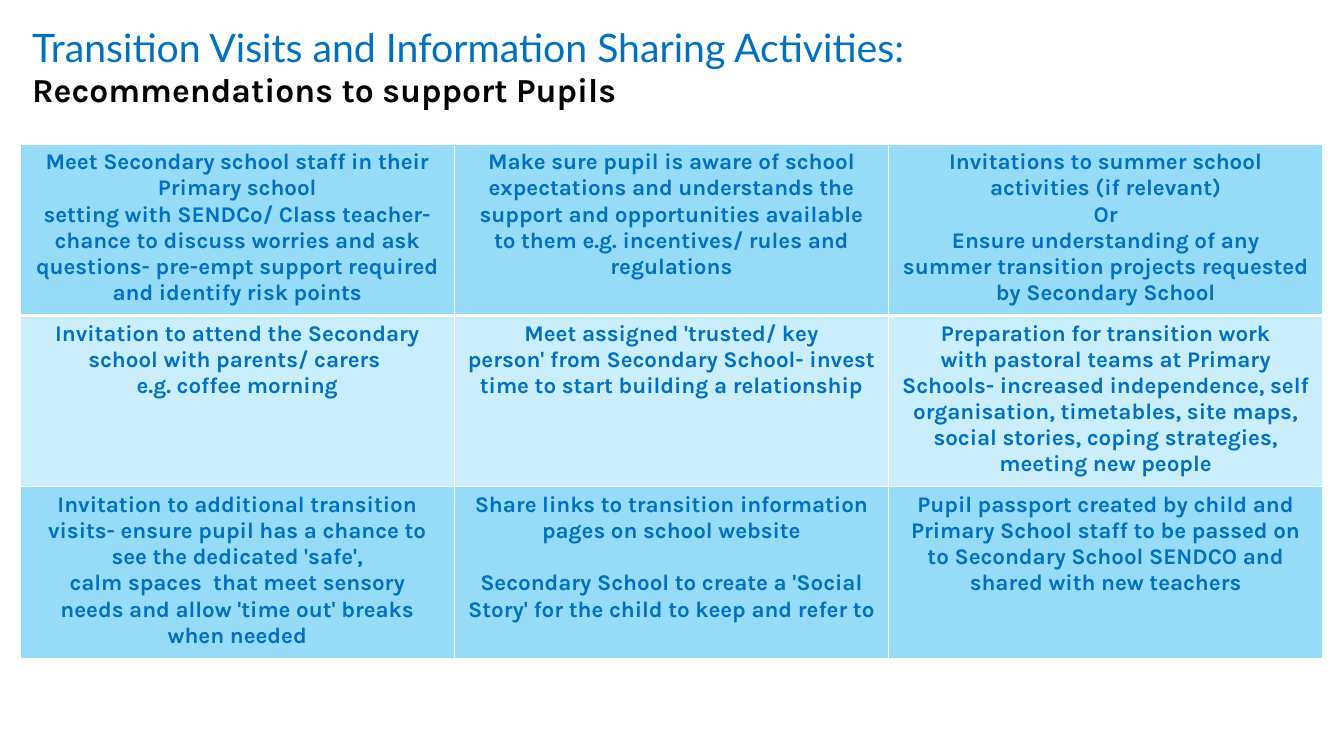
from lxml.etree import SubElement
from pptx import Presentation
from pptx.dml.color import RGBColor
from pptx.enum.text import PP_ALIGN as Align
from pptx.oxml.ns import qn
from pptx.util import Inches, Pt

BLUE, BLACK, WHITE = "0070C0", "000000", "FFFFFF"
ROW_FILLS = ["96DCF8", "CAEEFB"]
ROW_HEIGHT = 1.7
HARD_SPACE = chr(160)

# Each cell is a list of paragraphs; "~" stands for a non-breaking space
RECOMMENDATIONS = [
    [
        ["Meet Secondary school staff in~their Primary school "
         "setting~with~SENDCo/~Class teacher- chance to discuss~worries and~ask "
         "questions- pre-empt support required and identify risk points"],
        ["Make sure~pupil is aware~of school expectations and understands~the "
         "support~and opportunities~available to~them e.g.~incentives/~rules and "
         "regulations"],
        ["Invitations to~summer~school activities (if relevant)",
         "Or",
         "Ensure understanding of any summer~transition projects requested "
         "by Secondary~School"],
    ],
    [
        ["Invitation to attend the Secondary school with parents/ carers~",
         "e.g. coffee~morning"],
        ["Meet~assigned 'trusted/~key person'~from Secondary School-~invest "
         "time~to start~building a relationship"],
        ["Preparation for transition work with~pastoral teams at~Primary "
         "Schools-~increased independence, self organisation, timetables,~site maps, "
         "social stories,~coping strategies, meeting~new people"],
    ],
    [
        ["Invitation to additional transition visits-~ensure pupil has a chance to "
         "see the dedicated 'safe', calm~spaces~~that meet sensory "
         "needs~and allow~'time out' breaks when needed"],
        ["Share links to~transition information pages on~school website",
         "Secondary School to create a 'Social Story' for the child to keep and "
         "refer to"],
        ["Pupil passport created~by child and Primary School staff to~be~passed on "
         "to~Secondary~School SENDCO~and shared with new teachers"],
    ],
]
# Points of space between the paragraphs of a cell, by row and column
PARAGRAPH_GAPS = {(2, 1): 18.7}


def color(hex_code):
    return RGBColor.from_string(hex_code)


def style(paragraph, font_name, size, hex_code, bold=False):
    font = paragraph.font
    font.name, font.size, font.bold = font_name, Pt(size), bold
    font.color.rgb = color(hex_code)


def add_heading(slide, left, top, width, height, text, *font):
    frame = slide.shapes.add_textbox(
        Inches(left), Inches(top), Inches(width), Inches(height)).text_frame
    frame.word_wrap = True
    frame.text = text
    style(frame.paragraphs[0], *font)


def set_borders(cell, top, bottom):
    properties = cell._tc.get_or_add_tcPr()
    widths = {"a:lnL": 1, "a:lnR": 1, "a:lnT": top, "a:lnB": bottom}
    for position, (tag, width) in enumerate(widths.items()):
        line = SubElement(properties, qn(tag), w=str(Pt(width)))
        fill = SubElement(line, qn("a:solidFill"))
        SubElement(fill, qn("a:srgbClr"), val=WHITE)
        properties.insert(position, line)  # borders precede the cell fill


def fill_cell(cell, paragraphs, gap, hex_code):
    cell.fill.solid()
    cell.fill.fore_color.rgb = color(hex_code)
    cell.text = "\n".join(paragraphs).replace("~", HARD_SPACE)
    for index, paragraph in enumerate(cell.text_frame.paragraphs):
        paragraph.alignment = Align.CENTER
        style(paragraph, "Karla", 16, BLUE, True)
        if index and gap:
            paragraph.space_before = Pt(gap)


def add_recommendations(slide, left, top, width):
    rows, columns = len(RECOMMENDATIONS), len(RECOMMENDATIONS[0])
    grid = slide.shapes.add_table(
        rows, columns, Inches(left), Inches(top),
        Inches(width), Inches(ROW_HEIGHT * rows)).table
    grid.first_row = grid.horz_banding = False
    for r, row in enumerate(RECOMMENDATIONS):
        for c, paragraphs in enumerate(row):
            cell = grid.cell(r, c)
            fill_cell(cell, paragraphs, PARAGRAPH_GAPS.get((r, c)), ROW_FILLS[r % 2])
            # The rule under the first row is thicker
            set_borders(cell, top=3 if r == 1 else 1, bottom=3 if r == 0 else 1)


def main():
    deck = Presentation()
    deck.slide_width, deck.slide_height = Inches(13.33), Inches(7.5)
    slide = deck.slides.add_slide(deck.slide_layouts[6])

    # Headings
    add_heading(slide, 0.22, 0.18, 12.88, 1.41,
                "Transition Visits and Information Sharing Activities:",
                "Lato", 28, BLUE)
    add_heading(slide, 0.22, 0.63, 12.57, 0.5,
                "Recommendations to support Pupils", "Karla", 24, BLACK, True)

    # Table of recommendations
    add_recommendations(slide, 0.2, 1.43, 12.92)
    deck.save("out.pptx")


if __name__ == "__main__":
    main()
